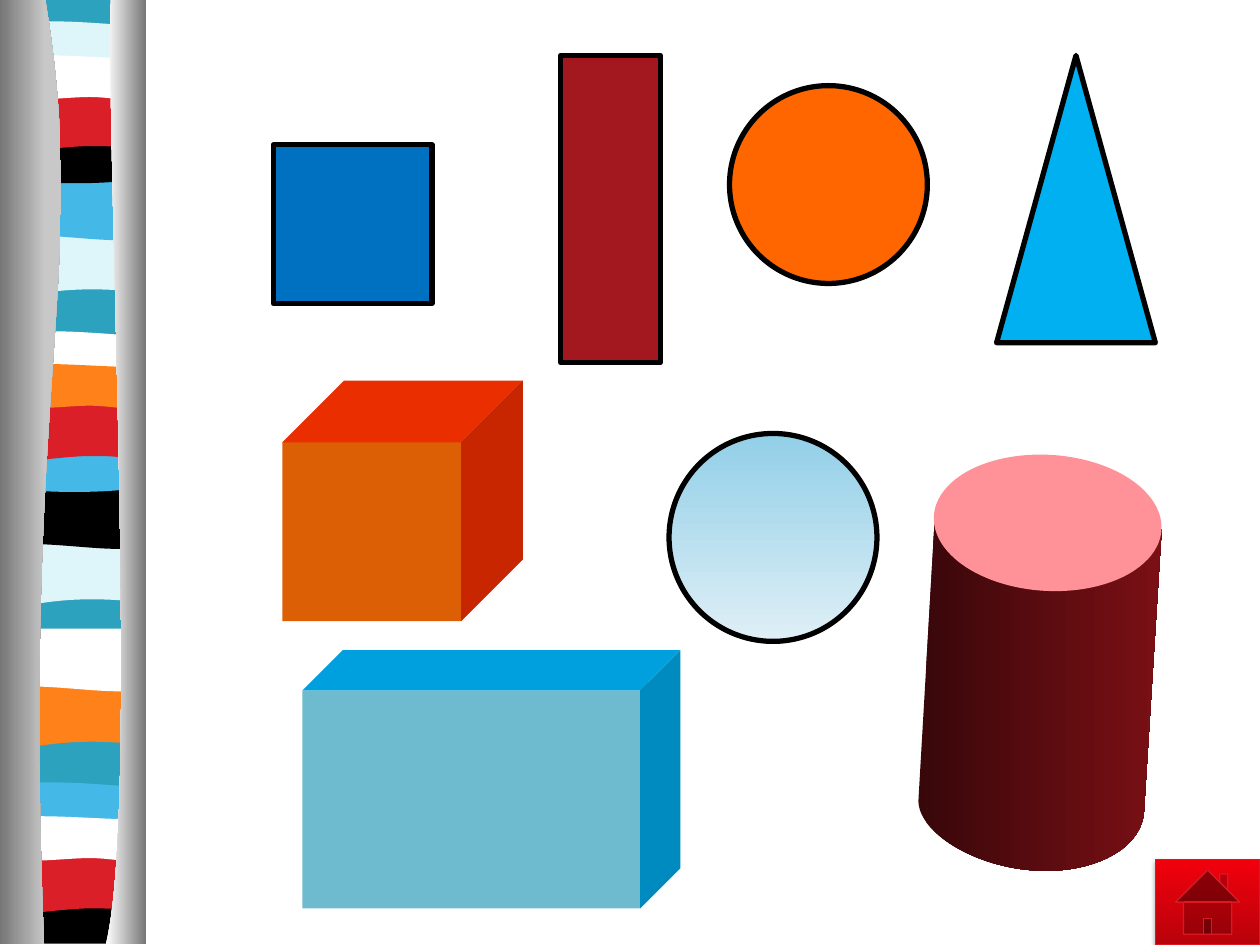
from lxml.etree import SubElement
from pptx import Presentation
from pptx.dml.color import RGBColor
from pptx.enum.shapes import MSO_SHAPE
from pptx.oxml.ns import qn
from pptx.util import Inches, Pt

COLORS = {
    "teal": "2DA2BF", "pale": "DEF5FA", "sky": "44B9E8", "black": "000000",
    "red": "DA1F28", "white": "FFFFFF", "orange": "FF8119",
    "grey": "767676", "light grey": "C8C8C8", "blue": "0070C0",
    "maroon": "A3171E", "bright orange": "FF6600", "cyan": "00B0F0",
    "ball top": "92CFE8", "ball bottom": "DFEFF6",
    "cube front": "DD5F05", "cube top": "EA2E00", "cube side": "C82600",
    "box front": "6EBACE", "box top": "00A0DE", "box side": "008BC0",
    "pillar top": "FF9298", "pillar dark": "38070A", "pillar light": "7A1015",
    "button bottom": "B8020B", "button top": "F2000C", "button line": "DA1A23",
}


def paint(shape, fills, angle=0, line=None, width=3):
    """Fill with one colour, or with a gradient from the first to the second."""
    shape.shadow.inherit = False
    if len(fills) == 1:
        shape.fill.solid()
        shape.fill.fore_color.rgb = RGBColor.from_string(COLORS[fills[0]])
    else:
        shape.fill.gradient()
        shape.fill.gradient_angle = angle
        for stop, name in zip(shape.fill.gradient_stops, fills):
            stop.color.rgb = RGBColor.from_string(COLORS[name])
    if line:
        shape.line.color.rgb = RGBColor.from_string(COLORS[line])
        shape.line.width = Pt(width)
    else:
        shape.line.fill.background()
    return shape


def outline(segments, top=0):
    """Closed freeform; a segment is a point or three points of a Bezier curve."""
    corners = [(Inches(s[-2]), Inches(s[-1] + top)) for s in segments]
    builder = page.shapes.build_freeform(*corners[0], scale=1.0)
    builder.add_line_segments(corners[1:], close=True)
    shape = builder.convert_to_shape()
    # Turn the straight segments that have control points into curves
    edges = list(shape.element.iter(qn("a:lnTo")))
    for edge, segment in zip(edges, segments[1:]):
        if len(segment) == 6:
            curve = edge.makeelement(qn("a:cubicBezTo"))
            for x, y in zip(segment[::2], segment[1::2]):
                SubElement(curve, qn("a:pt"), x=str(Inches(x) - shape.left),
                           y=str(Inches(y + top) - shape.top))
            edge.getparent().replace(edge, curve)
    return shape


deck = Presentation()
deck.slide_width, deck.slide_height = Inches(10), Inches(7.5)
page = deck.slides.add_slide(deck.slide_layouts[6])

# Band outlines, measured from the top of each band
L, R = 0.05, 1.13
BANDS = {
    "drop": [(R, 0), (R, 0.47), (0.38, 0.39, 0.23, 0.55, L, 0.47), (L, 0)],
    "swell": [(R, 0), (R, 0.47), (0.95, 0.55, 0.38, 0.42, L, 0.47), (L, 0)],
    "lens": [(R, 0.05), (R, 0.29), (0.95, 0.33, 0.23, 0.33, L, 0.29), (L, 0.05),
             (0.12, 0, 0.28, 0.01, 0.46, 0.01), (0.64, 0.01, 0.99, 0.04, R, 0.05)],
    "bowl": [(R, 0), (R, 0.33), (0.95, 0.39, 0.23, 0.39, L, 0.33), (L, 0),
             (0.71, 0.05, 0.9, 0, R, 0)],
    "arch": [(R, 0), (R, 0.47), (0.96, 0.42, 0.89, 0.42, 0.71, 0.42),
             (0.53, 0.42, 0.21, 0.47, L, 0.47), (L, 0)],
    "flag": [(R, 0.05), (R, 0.36), (1.06, 0.41, 0.89, 0.36, 0.71, 0.36),
             (0.53, 0.36, 0.16, 0.41, L, 0.36), (L, 0.05),
             (0.2, 0, 0.78, 0.05, 0.96, 0.05)],
    "base": [(R, 0), (R, 0.37), (L, 0.37), (L, 0), (0.71, 0.05, 0.9, 0, R, 0)],
    "strip": [(R, 0), (R, 7.48), (L, 7.48), (L, 0)],
}

# Striped side border, back to front
for band, top, color in [
    ("strip", 0, "teal"),
    ("drop", 1.85, "pale"), ("swell", 1.41, "sky"), ("lens", 0.16, "pale"),
    ("bowl", 1.08, "black"), ("arch", 0.74, "red"), ("flag", 0.41, "white"),
    ("drop", 4.31, "pale"), ("swell", 3.86, "black"), ("lens", 2.62, "white"),
    ("bowl", 3.53, "sky"), ("arch", 3.2, "red"), ("flag", 2.86, "orange"),
    ("drop", 5.44, "orange"), ("swell", 4.99, "white"), ("lens", 6.2, "sky"),
    ("base", 7.12, "black"), ("arch", 6.79, "red"), ("flag", 6.45, "white"),
]:
    paint(outline(BANDS[band], top), [color])

# Grey edges of the border
paint(outline([(0.36, 0), (0.72, 2.16, 0.17, 2.96, 0.35, 7.49), (0, 7.49), (0, 0)]),
      ["grey", "light grey"])
paint(outline([(0.88, 0), (0.84, 1.25, 1.11, 6.46, 0.84, 7.49), (1.16, 7.49), (1.16, 0)]),
      ["white", "grey"])

# Cuboids: front, top and side faces
for name, x, y, width, height, depth in [
    ("box", 2.4, 5.48, 2.68, 1.73, 0.32),
    ("cube", 2.24, 3.51, 1.42, 1.42, 0.49),
]:
    right, bottom = x + width, y + height
    back_corner = (right + depth, y - depth)
    front = page.shapes.add_shape(
        MSO_SHAPE.RECTANGLE, Inches(x), Inches(y), Inches(width), Inches(height))
    paint(front, [f"{name} front"])
    paint(outline([(x, y), (x + depth, y - depth), back_corner, (right, y)]),
          [f"{name} top"])
    paint(outline([(right, y), back_corner, (right + depth, bottom - depth),
                   (right, bottom)]), [f"{name} side"])

# Cylinder: body, then lid
paint(outline([(7.42, 4.1), (9.22, 4.2), (9.08, 6.44),
               (9.06, 6.74, 8.68, 6.93, 8.24, 6.91),
               (7.74, 6.89, 7.27, 6.6, 7.29, 6.34)]),
      ["pillar dark", "pillar light"])
lid = page.shapes.add_shape(
    MSO_SHAPE.OVAL, Inches(7.41), Inches(3.61), Inches(1.81), Inches(1.08))
lid.rotation = 3.5
paint(lid, ["pillar top"])

# Flat figures, the ball and the home button
for kind, x, y, width, height, style in [
    (MSO_SHAPE.OVAL, 5.31, 3.44, 1.65, 1.65,
     {"fills": ["ball top", "ball bottom"], "angle": 270}),
    (MSO_SHAPE.RECTANGLE, 2.17, 1.15, 1.26, 1.26, {"fills": ["blue"]}),
    (MSO_SHAPE.RECTANGLE, 4.45, 0.44, 0.79, 2.44, {"fills": ["maroon"]}),
    (MSO_SHAPE.OVAL, 5.79, 0.68, 1.57, 1.57, {"fills": ["bright orange"]}),
    (MSO_SHAPE.ISOSCELES_TRIANGLE, 7.91, 0.44, 1.26, 2.28, {"fills": ["cyan"]}),
    (MSO_SHAPE.ACTION_BUTTON_HOME, 9.17, 6.82, 0.83, 0.68,
     {"fills": ["button bottom", "button top"], "angle": 90,
      "line": "button line", "width": 0.75}),
]:
    figure = page.shapes.add_shape(
        kind, Inches(x), Inches(y), Inches(width), Inches(height))
    paint(figure, **{"line": "black", **style})

# Soft shadow under the button, the last figure
effects = figure.element.spPr.find(qn("a:effectLst"))
shadow = SubElement(effects, qn("a:outerShdw"), blurRad=str(Pt(3.1)),
                    dist=str(Pt(1.8)), dir="5400000", rotWithShape="0")
tone = SubElement(shadow, qn("a:srgbClr"), val=COLORS["black"])
SubElement(tone, qn("a:alpha"), val="35000")

deck.save("out.pptx")
